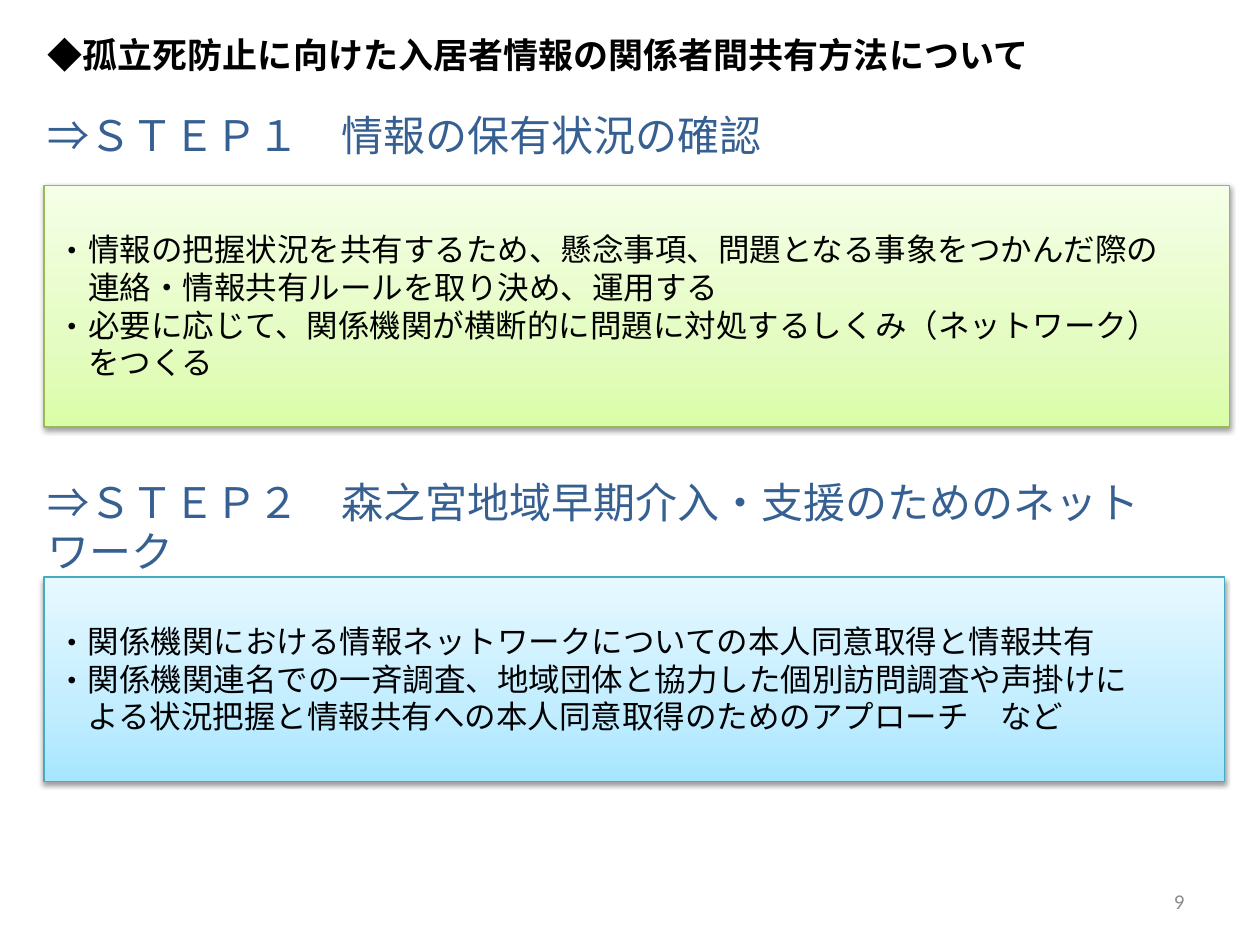
from copy import deepcopy

from lxml import etree
from pptx import Presentation
from pptx.dml.color import RGBColor
from pptx.enum.shapes import MSO_SHAPE
from pptx.enum.text import MSO_ANCHOR, PP_ALIGN
from pptx.oxml import parse_xml
from pptx.oxml.ns import nsdecls, qn
from pptx.util import Inches, Pt

RECTANGLE = MSO_SHAPE.RECTANGLE
TOP, MIDDLE = MSO_ANCHOR.TOP, MSO_ANCHOR.MIDDLE
LEFT, RIGHT = PP_ALIGN.LEFT, PP_ALIGN.RIGHT
JAPANESE, LATIN = "Noto Sans CJK JP", "Calibri"

COLORS = {
    "text": "000000",
    "heading": "376092",
    "number": "8C8C8C",
    "green": ["DAFDA7", "E4FCC2", "F5FFE7"],
    "green line": "98B955",
    "blue": ["A7E6FF", "C1EDFF", "E7F8FF"],
    "blue line": "46AAC5",
}
GRADIENT_POSITIONS = [0, 0.35, 1]

TITLE = "　◆孤立死防止に向けた入居者情報の関係者間共有方法について"
PAGE_NUMBER = "9"
STEPS = [
    {
        "heading": "⇒ＳＴＥＰ１　情報の保有状況の確認",
        "heading at": (0.28, 0.76, 6.38, 0.63),
        "panel at": (0.35, 1.47, 9.41, 1.92),
        "color": "green",
        "points": [
            "情報の把握状況を共有するため、懸念事項、問題となる事象をつかんだ際の\v"
            "連絡・情報共有ルールを取り決め、運用する",
            "必要に応じて、関係機関が横断的に問題に対処するしくみ（ネットワーク）\v"
            "をつくる",
        ],
    },
    {
        "heading": "⇒ＳＴＥＰ２　森之宮地域早期介入・支援のためのネットワーク",
        "heading at": (0.28, 3.87, 9.29, 0.63),
        "panel at": (0.35, 4.58, 9.37, 1.62),
        "color": "blue",
        "points": [
            "関係機関における情報ネットワークについての本人同意取得と情報共有",
            "関係機関連名での一斉調査、地域団体と協力した個別訪問調査や声掛けに\v"
            "よる状況把握と情報共有への本人同意取得のためのアプローチ　など",
        ],
    },
]


def inches(lengths):
    return [Inches(length) for length in lengths]


def write(box, texts, size, color="text", font=JAPANESE, bold=False,
          align=LEFT, anchor=MIDDLE, leading=None, bullet=None):
    frame = box.text_frame
    frame.word_wrap = True
    frame.vertical_anchor = anchor
    for index, text in enumerate(texts):
        para = frame.paragraphs[0] if index == 0 else frame.add_paragraph()
        para.text = text
        para.alignment = align
        if leading:
            para.line_spacing = Pt(leading)
        if bullet:
            properties = para._p.get_or_add_pPr()
            properties.set("marL", str(Inches(0.25)))
            properties.set("indent", str(-Inches(0.25)))
            etree.SubElement(properties, qn("a:buFont"), typeface=font)
            etree.SubElement(properties, qn("a:buChar"), char=bullet)
        for span in para.runs:
            span.font.size = Pt(size)
            span.font.bold = bold
            span.font.name = font
            span.font.color.rgb = RGBColor.from_string(COLORS[color])
            etree.SubElement(span._r.get_or_add_rPr(), qn("a:ea"), typeface=font)


def add_panel(page, place, color):
    panel = page.shapes.add_shape(RECTANGLE, *inches(place))
    panel.line.color.rgb = RGBColor.from_string(COLORS[color + " line"])
    panel.line.width = Pt(0.75)
    panel.fill.gradient()
    panel.fill.gradient_angle = 90
    stop_list = panel._element.spPr.find(".//" + qn("a:gsLst"))
    stop_list.append(deepcopy(stop_list[0]))
    stops = zip(panel.fill.gradient_stops, GRADIENT_POSITIONS, COLORS[color])
    for stop, position, shade in stops:
        stop.position = position
        stop.color.rgb = RGBColor.from_string(shade)
    panel.shadow.inherit = False
    panel._element.spPr.find(qn("a:effectLst")).append(parse_xml(
        f'<a:outerShdw {nsdecls("a")} blurRad="{Pt(3.1)}" dist="{Pt(1.6)}" '
        'dir="5400000" rotWithShape="0"><a:srgbClr val="000000">'
        '<a:alpha val="38000"/></a:srgbClr></a:outerShdw>'))
    panel.text_frame.margin_top = Inches(0.36)
    return panel


deck = Presentation()
deck.slide_width, deck.slide_height = Inches(10), Inches(7.5)
page = deck.slides.add_slide(deck.slide_layouts[5])

title = page.shapes.title
title.left, title.top, title.width, title.height = inches((0, 0.12, 10.04, 0.63))
write(title, [TITLE], 20, bold=True)

for step in STEPS:
    heading = page.shapes.add_textbox(*inches(step["heading at"]))
    write(heading, [step["heading"]], 24, color="heading", leading=28)
    panel = add_panel(page, step["panel at"], step["color"])
    write(panel, step["points"], 18, anchor=TOP, leading=21.5, bullet="・")

number = page.shapes.add_textbox(*inches((7.17, 6.95, 2.33, 0.4)))
write(number, [PAGE_NUMBER], 12, color="number", font=LATIN, align=RIGHT)

deck.save("out.pptx")
